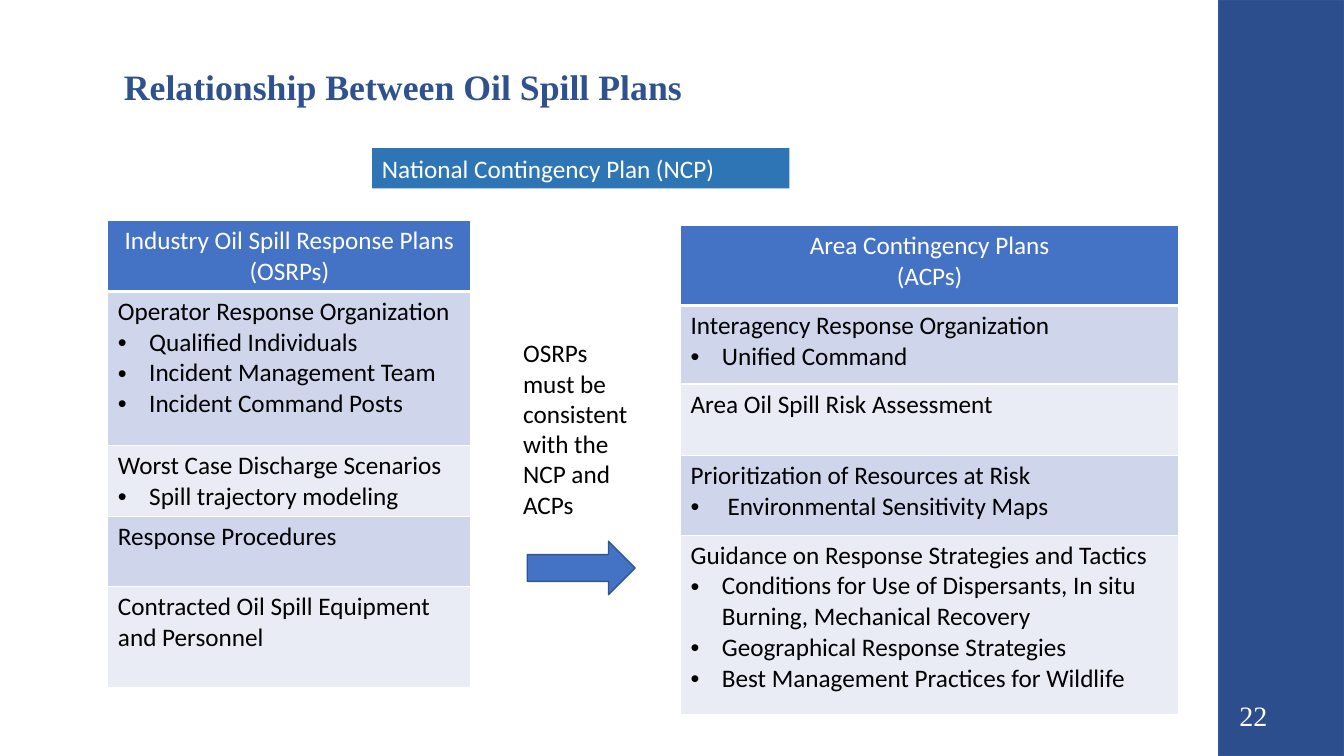
from lxml import etree
from pptx import Presentation
from pptx.dml.color import RGBColor
from pptx.enum.shapes import MSO_SHAPE as Shape
from pptx.enum.text import MSO_ANCHOR as Anchor, PP_ALIGN as Align
from pptx.oxml.ns import qn
from pptx.util import Inches, Pt

WHITE, BLACK, BLUE, OUTLINE = "FFFFFF", "000000", "4472C4", "325491"
BANDS = ("CFD5EA", "E9EBF5")
BODY = {"name": "Calibri", "size": Pt(18)}
SERIF = {"name": "Times New Roman"}
INDENT = Inches(0.31)

TITLE = "Relationship Between Oil Spill Plans"
NATIONAL_PLAN = "National Contingency Plan (NCP)"
RULE = "OSRPs must be consistent with the NCP and ACPs"
PAGE_NUMBER = "22"

# Each row: height, first line, further lines (bullets below the header)
INDUSTRY_PLANS = [
    (0.7, "Industry Oil Spill Response Plans", ["(OSRPs)"]),
    (1.53, "Operator Response Organization",
     ["Qualified Individuals", "Incident Management Team", "Incident Command Posts"]),
    (0.7, "Worst Case Discharge Scenarios", ["Spill trajectory modeling"]),
    (0.7, "Response Procedures", []),
    (1.0, "Contracted Oil Spill Equipment and Personnel", []),
]
AREA_PLANS = [
    (0.79, "Area Contingency Plans", ["(ACPs)"]),
    (0.78, "Interagency Response Organization", ["Unified Command"]),
    (0.71, "Area Oil Spill Risk Assessment", []),
    (0.79, "Prioritization of Resources at Risk", [" Environmental Sensitivity Maps"]),
    (1.78, "Guidance on Response Strategies and Tactics",
     ["Conditions for Use of Dispersants, In situ Burning, Mechanical Recovery",
      "Geographical Response Strategies", "Best Management Practices for Wildlife"]),
]


def paint(color_format, color):
    color_format.rgb = RGBColor.from_string(color)


def fill_with(target, color):
    target.fill.solid()
    paint(target.fill.fore_color, color)


def write(paragraph, text, color, font, align=Align.LEFT):
    paragraph.alignment = align
    run = paragraph.add_run()
    run.text = text
    for name, value in font.items():
        setattr(run.font, name, value)
    paint(run.font.color, color)
    return run


def add_bullet(paragraph):
    properties = paragraph._p.get_or_add_pPr()
    properties.set("marL", str(INDENT))
    properties.set("indent", str(-INDENT))
    etree.SubElement(properties, qn("a:buFont")).set("typeface", "Arial")
    etree.SubElement(properties, qn("a:buChar")).set("char", "•")


def add_borders(cell, widths):
    """Draw white cell borders; widths maps a side (L, R, T, B) to points."""
    properties = cell._tc.get_or_add_tcPr()
    for side, width in widths.items():
        line = etree.SubElement(properties, qn(f"a:ln{side}"), w=str(Pt(width)))
        fill = etree.SubElement(line, qn("a:solidFill"))
        etree.SubElement(fill, qn("a:srgbClr"), val=WHITE)


def add_text(slide, box, text, color, font, align=Align.LEFT, anchor=Anchor.TOP):
    """Add a wrapped text box and return it with its run."""
    text_box = slide.shapes.add_textbox(*map(Inches, box))
    frame = text_box.text_frame
    frame.word_wrap = True
    frame.vertical_anchor = anchor
    return text_box, write(frame.paragraphs[0], text, color, font, align)


def add_block(slide, kind, box, fill, outline):
    shape = slide.shapes.add_shape(kind, *map(Inches, box))
    shape.shadow.inherit = False
    fill_with(shape, fill)
    paint(shape.line.color, outline)
    shape.line.width = Pt(1)


def add_plan_table(slide, left, top, width, rows):
    height = sum(row[0] for row in rows)
    table = slide.shapes.add_table(
        len(rows), 1, *map(Inches, (left, top, width, height))).table
    for index, (row_height, heading, details) in enumerate(rows):
        is_header = index == 0
        table.rows[index].height = Inches(row_height)
        cell = table.cell(index, 0)
        borders = {"L": 1, "R": 1, "T": 1, "B": 3} if is_header else {"L": 1, "R": 1, "B": 1}
        add_borders(cell, borders)
        fill_with(cell, BLUE if is_header else BANDS[(index - 1) % 2])
        color = WHITE if is_header else BLACK
        align = Align.CENTER if is_header else Align.LEFT
        frame = cell.text_frame
        write(frame.paragraphs[0], heading, color, BODY, align)
        for detail in details:
            paragraph = frame.add_paragraph()
            if not is_header:
                add_bullet(paragraph)
            write(paragraph, detail, color, BODY, align)


def main():
    presentation = Presentation()
    presentation.slide_width = Inches(13.33)
    presentation.slide_height = Inches(7.5)
    slide = presentation.slides.add_slide(presentation.slide_layouts[6])

    add_block(slide, Shape.RECTANGLE, (12.09, 0, 1.24, 7.5), "2C4E8C", OUTLINE)
    title, title_run = add_text(slide, (1.13, 0.65, 11.5, 0.66), TITLE, "2F528F",
                                SERIF | {"size": Pt(44), "bold": True}, anchor=Anchor.MIDDLE)
    title.text_frame.paragraphs[0].line_spacing = 0.9
    title_run.font._element.set("baseline", "30000")
    add_text(slide, (11.61, 6.88, 1.06, 0.44), PAGE_NUMBER, WHITE,
             SERIF | {"size": Pt(20)}, Align.RIGHT, Anchor.MIDDLE)

    add_plan_table(slide, 1.07, 2.19, 3.6, INDUSTRY_PLANS)
    add_plan_table(slide, 6.75, 2.24, 4.94, AREA_PLANS)

    national_plan, _ = add_text(slide, (3.69, 1.47, 4.14, 0.4), NATIONAL_PLAN, WHITE, BODY)
    fill_with(national_plan, "2E75B6")
    add_text(slide, (5.09, 3.3, 1.34, 1.92), RULE, BLACK, BODY)
    add_block(slide, Shape.RIGHT_ARROW, (5.23, 5.37, 1.07, 0.53), BLUE, OUTLINE)

    presentation.save("out.pptx")


if __name__ == "__main__":
    main()
